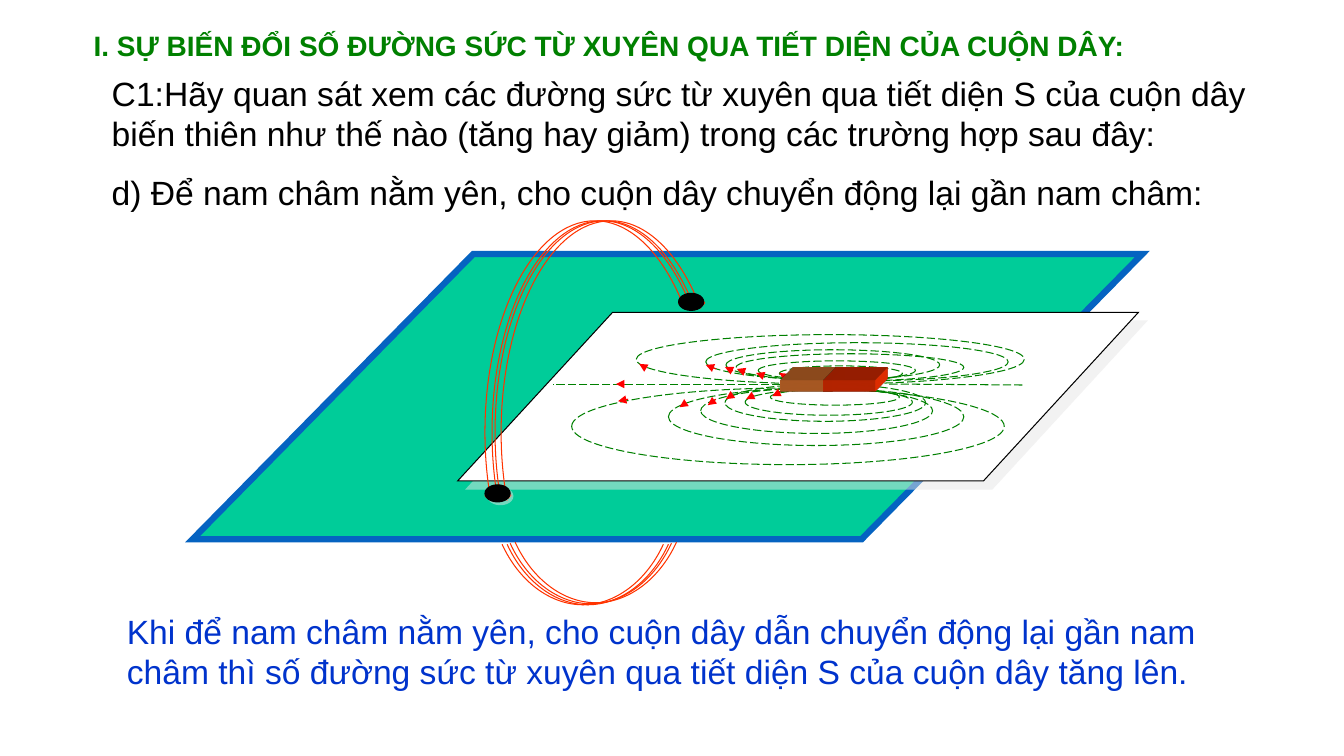
from copy import deepcopy

from lxml.etree import SubElement
from pptx import Presentation
from pptx.dml.color import RGBColor
from pptx.enum.dml import MSO_LINE
from pptx.enum.shapes import MSO_CONNECTOR, MSO_SHAPE
from pptx.enum.text import MSO_AUTO_SIZE
from pptx.oxml.ns import qn
from pptx.util import Emu, Pt

EMU_PER_PX = 9144
GREEN, COIL, ARROW, BLACK = "008000", "FF3300", "FF0000", "000000"

FIELD_LOOPS = [
    (631, 332, 385, 49), (773, 363, 122, 15), (752, 358, 156, 19),
    (730, 351, 226, 27), (720, 347, 212, 30), (700, 340, 300, 38),
    (567, 385, 429, 76), (764, 386, 128, 16), (739, 386, 166, 26),
    (719, 381, 199, 37), (663, 385, 293, 57), (695, 385, 230, 45),
]
FIELD_AXIS = [(882, 381, 1016, 382), (774, 381, 548, 381)]
FIELD_ARROWS = [
    (619, 381, 611, 381), (623, 396, 613, 398), (680, 400, 674, 404),
    (710, 396, 702, 402), (726, 392, 720, 396), (748, 392, 740, 396),
    (774, 389, 766, 393), (639, 364, 634, 361), (710, 366, 700, 362),
    (727, 368, 719, 364), (739, 369, 731, 366), (758, 373, 750, 370),
    (781, 375, 773, 370),
]
UPPER_TURN = [(689, 306), (668, 251), (635, 219), (600, 219), (540, 219),
              (491, 313), (491, 429), (491, 452), (493, 475), (497, 497)]
UPPER_CENTER = (600, 429)
LOWER_TURN = [(506, 539), (523, 576), (554, 599), (586, 599),
              (618, 599), (649, 576), (666, 539)]
LOWER_CENTER = (586, 472)


def px(length):
    return Emu(length * EMU_PER_PX)


def color(hex_code):
    return RGBColor.from_string(hex_code)


def paint(shape, fill=None, line=None, weight=0.75):
    shape.shadow.inherit = False
    if fill:
        shape.fill.solid()
        shape.fill.fore_color.rgb = color(fill)
    else:
        shape.fill.background()
    if line:
        shape.line.color.rgb = color(line)
        shape.line.width = Pt(weight)
    else:
        shape.line.fill.background()


def add_figure(slide, kind, box, fill=None, line=None, weight=0.75):
    figure = slide.shapes.add_shape(kind, *map(px, box))
    paint(figure, fill, line, weight)
    return figure


def add_plane(slide, box, slant, fill, line, weight):
    """Add a parallelogram with sharp corners."""
    plane = add_figure(slide, MSO_SHAPE.PARALLELOGRAM, box, fill, line, weight)
    plane.adjustments[0] = slant
    SubElement(plane._element.spPr.find(qn("a:ln")), qn("a:miter"), lim="800000")
    return plane


def cast_shadow(shape, distance):
    """Add a soft grey shadow falling to the lower right."""
    effects = shape._element.spPr.find(qn("a:effectLst"))
    shadow = SubElement(effects, qn("a:outerShdw"), dist=str(Pt(distance)),
                        dir="2700000", algn="ctr", rotWithShape="0")
    tint = SubElement(shadow, qn("a:srgbClr"), val="E7E6E6")
    SubElement(tint, qn("a:alpha"), val="50000")


def add_magnet_half(slide, box, fill):
    """Add a bar extruded to the upper right."""
    half = add_figure(slide, MSO_SHAPE.RECTANGLE, box, fill)
    properties = half._element.spPr
    scene = SubElement(properties, qn("a:scene3d"))
    SubElement(scene, qn("a:camera"), prst="legacyObliqueTopRight")
    SubElement(scene, qn("a:lightRig"), rig="legacyFlat3", dir="b")
    solid = SubElement(properties, qn("a:sp3d"), extrusionH=str(px(35)),
                       prstMaterial="legacyMatte")
    extrusion = SubElement(solid, qn("a:extrusionClr"))
    SubElement(extrusion, qn("a:srgbClr"), val=fill)


def add_turn(slide, controls, center):
    """Draw an open chain of cubic curves around an undrawn center."""
    start, *rest = [(px(x), px(y)) for x, y in [*controls, center]]
    builder = slide.shapes.build_freeform(*start)
    builder.add_line_segments(rest, close=False)
    turn = builder.convert_to_shape()
    paint(turn, line=COIL)

    arc = next(turn._element.iter(qn("a:pathLst")))[0]
    *corners, spoke = arc.findall(qn("a:lnTo"))
    arc.remove(spoke)
    for first in range(0, len(corners), 3):
        curve = SubElement(arc, qn("a:cubicBezTo"))
        for corner in corners[first:first + 3]:
            curve.append(corner[0])
            arc.remove(corner)
    sector = deepcopy(arc)
    sector.append(spoke)
    SubElement(sector, qn("a:close"))
    sector.set("stroke", "0")
    arc.set("fill", "none")
    arc.addnext(sector)


def add_turns(slide, controls, center, shifts):
    """Draw one coil turn for each horizontal and vertical shift."""
    for dx, dy in shifts:
        add_turn(slide, [(x + dx, y + dy) for x, y in controls],
                 (center[0] + dx, center[1] + dy))


def add_line(slide, ends, hex_code, dashed=False, arrow=False):
    line = slide.shapes.add_connector(MSO_CONNECTOR.STRAIGHT, *map(px, ends))
    line.line.color.rgb = color(hex_code)
    line.line.width = Pt(0.75)
    if dashed:
        line.line.dash_style = MSO_LINE.LONG_DASH
    properties = line._element.spPr
    if arrow:
        SubElement(properties.find(qn("a:ln")), qn("a:tailEnd"), type="triangle")
    SubElement(properties, qn("a:effectLst"))


def add_text(slide, box, words, size, hex_code, bold=False):
    frame = slide.shapes.add_textbox(*map(px, box)).text_frame
    frame.word_wrap = True
    frame.auto_size = MSO_AUTO_SIZE.SHAPE_TO_FIT_TEXT
    frame.text = words
    font = frame.paragraphs[0].runs[0].font
    font.name = "Arial"
    font.size = Pt(size)
    font.bold = bold
    font.color.rgb = color(hex_code)


def add_field(slide):
    for box in FIELD_LOOPS:
        loop = add_figure(slide, MSO_SHAPE.OVAL, box, line=GREEN)
        loop.line.dash_style = MSO_LINE.LONG_DASH
    for ends in FIELD_AXIS:
        add_line(slide, ends, GREEN, dashed=True)
    for ends in FIELD_ARROWS:
        add_line(slide, ends, ARROW, arrow=True)


def main():
    presentation = Presentation()
    presentation.slide_width, presentation.slide_height = px(1333), px(750)
    slide = presentation.slides.add_slide(presentation.slide_layouts[6])

    add_plane(slide, (191, 252, 942, 283), 0.984, "00CC99", "0563C1", 4.5)
    add_turns(slide, LOWER_TURN, LOWER_CENTER, [(0, 0), (-3, 1), (5, -1), (-8, 1)])
    sheet = add_plane(slide, (454, 310, 675, 167), 0.919, "FFFFFF", BLACK, 0.75)
    cast_shadow(sheet, 8.5)
    add_field(slide)
    for left, fill in ((774, "ED7D31"), (817, "FF3300")):
        add_magnet_half(slide, (left, 377, 51, 11), fill)

    add_turns(slide, UPPER_TURN, UPPER_CENTER, [(0, 0), (-3, 0), (6, 0), (-10, 0)])
    for left, top in ((481, 487), (673, 296)):
        add_figure(slide, MSO_SHAPE.OVAL, (left, top, 26, 9), line=COIL)
    near_hole, _ = [
        add_figure(slide, MSO_SHAPE.OVAL, (left, top, 25, 17), BLACK, BLACK)
        for left, top in ((481, 481), (673, 291))
    ]
    cast_shadow(near_hole, 2.8)

    add_text(slide, (116, 601, 1137, 91),
             "Khi để nam châm nằm yên, cho cuộn dây dẫn chuyển động lại gần nam châm "
             "thì số đường sức từ xuyên qua tiết diện S của cuộn dây tăng lên.",
             24, "0033CC")
    add_text(slide, (101, 166, 1152, 50),
             "d) Để nam châm nằm yên, cho cuộn dây chuyển động lại gần nam châm:",
             24, BLACK)
    add_text(slide, (101, 67, 1152, 91),
             "C1:Hãy quan sát xem các đường sức từ xuyên qua tiết diện S của cuộn dây "
             "biến thiên như thế nào (tăng hay giảm) trong các trường hợp sau đây:",
             24, BLACK)
    add_text(slide, (83, 23, 1050, 44),
             "I. SỰ BIẾN ĐỔI SỐ ĐƯỜNG SỨC TỪ XUYÊN QUA TIẾT DIỆN CỦA CUỘN DÂY:",
             20, GREEN, bold=True)
    presentation.save("out.pptx")


if __name__ == "__main__":
    main()
